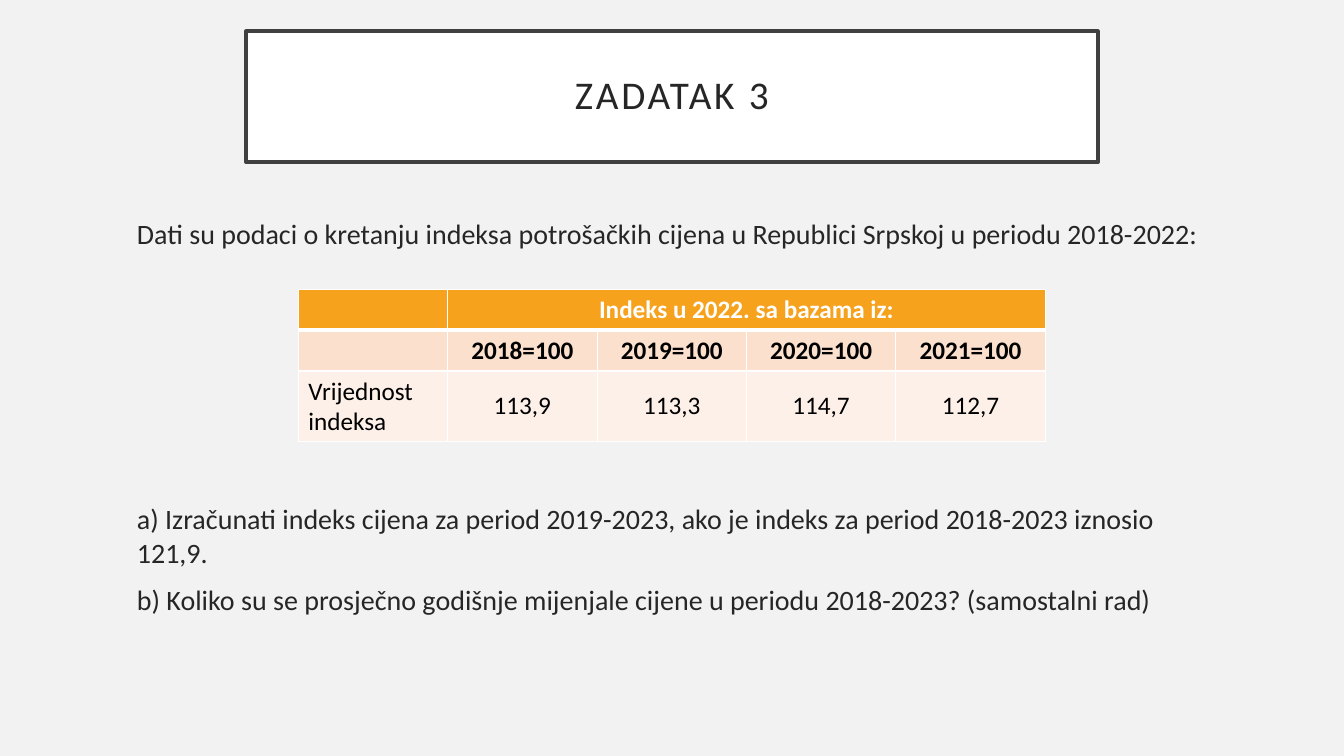
from lxml.etree import SubElement
from pptx import Presentation
from pptx.dml.color import RGBColor
from pptx.enum.text import MSO_ANCHOR, PP_ALIGN
from pptx.oxml.ns import qn
from pptx.util import Pt

COLORS = {
    "back": "F2F2F2", "white": "FFFFFF", "frame": "404040", "text": "262626",
    "black": "000000", "head": "F6A21D", "base": "FBE0CD", "value": "FDF0E8",
}


def style(para, size, color, bold=False):
    for run in para.runs:
        font = run.font
        font.name, font.size, font.bold = "Calibri", Pt(size), bold
        font.color.rgb = RGBColor.from_string(COLORS[color])


def border(cell, side, width):
    line = SubElement(cell._tc.get_or_add_tcPr(), qn(f"a:ln{side}"), w=str(Pt(width)))
    fill = SubElement(line, qn("a:solidFill"))
    SubElement(fill, qn("a:srgbClr"), val=COLORS["white"])


prs = Presentation()
prs.slide_width, prs.slide_height = Pt(960), Pt(540)
slide = prs.slides.add_slide(prs.slide_layouts[5])
slide.background.fill.solid()
slide.background.fill.fore_color.rgb = RGBColor.from_string(COLORS["back"])

# Framed title
title = slide.shapes.title
title.left, title.top, title.width, title.height = Pt(175.7), Pt(22.3), Pt(608.6), Pt(93.6)
title.fill.solid()
title.fill.fore_color.rgb = RGBColor.from_string(COLORS["white"])
title.line.color.rgb = RGBColor.from_string(COLORS["frame"])
title.line.width = Pt(2.5)
frame = title.text_frame
frame.text = "ZADATAK 3"
frame.vertical_anchor = MSO_ANCHOR.MIDDLE
frame.margin_left = frame.margin_right = frame.margin_top = frame.margin_bottom = Pt(14.4)
para = frame.paragraphs[0]
para.alignment = PP_ALIGN.CENTER
para.line_spacing = 0.9
style(para, 28, "text")
para.runs[0].font._element.set("spc", "200")

# Task text, with a gap for the table after the first paragraph
body = slide.shapes.add_textbox(Pt(90.7), Pt(151.2), Pt(778.3), Pt(360)).text_frame
body.word_wrap = True
body.text = "\n".join([
    "Dati su podaci o kretanju indeksa potrošačkih cijena u Republici Srpskoj u periodu 2018-2022:",
    "a) Izračunati indeks cijena za period 2019-2023, ako je indeks za period 2018-2023 iznosio 121,9.",
    "b) Koliko su se prosječno godišnje mijenjale cijene u periodu 2018-2023? (samostalni rad)",
])
for para, gap in zip(body.paragraphs, (10, 179.5, 10)):
    para.space_before = Pt(gap)
    style(para, 20, "text")

# Index table
rows = [
    ["", "Indeks u 2022. sa bazama iz:", "", "", ""],
    ["", "2018=100", "2019=100", "2020=100", "2021=100"],
    ["Vrijednost indeksa", "113,9", "113,3", "114,7", "112,7"],
]
looks = [("head", "white", True), ("base", "black", True), ("value", "black", False)]
table = slide.shapes.add_table(3, 5, Pt(213.1), Pt(206.6), Pt(533.5), Pt(87.6)).table
for r, (texts, (fill, color, bold)) in enumerate(zip(rows, looks)):
    for c, text in enumerate(texts):
        cell = table.cell(r, c)
        for side in "LRTB":
            thick = (r, side) in ((0, "B"), (1, "T"))
            border(cell, side, 3 if thick else 1)
        cell.fill.solid()
        cell.fill.fore_color.rgb = RGBColor.from_string(COLORS[fill])
        cell.vertical_anchor = MSO_ANCHOR.MIDDLE
        cell.text_frame.text = text
        para = cell.text_frame.paragraphs[0]
        para.alignment = PP_ALIGN.CENTER if c else PP_ALIGN.LEFT
        para.font.size = Pt(18)
        style(para, 18, color, bold)
table.cell(0, 1).merge(table.cell(0, 4))

prs.save("out.pptx")
